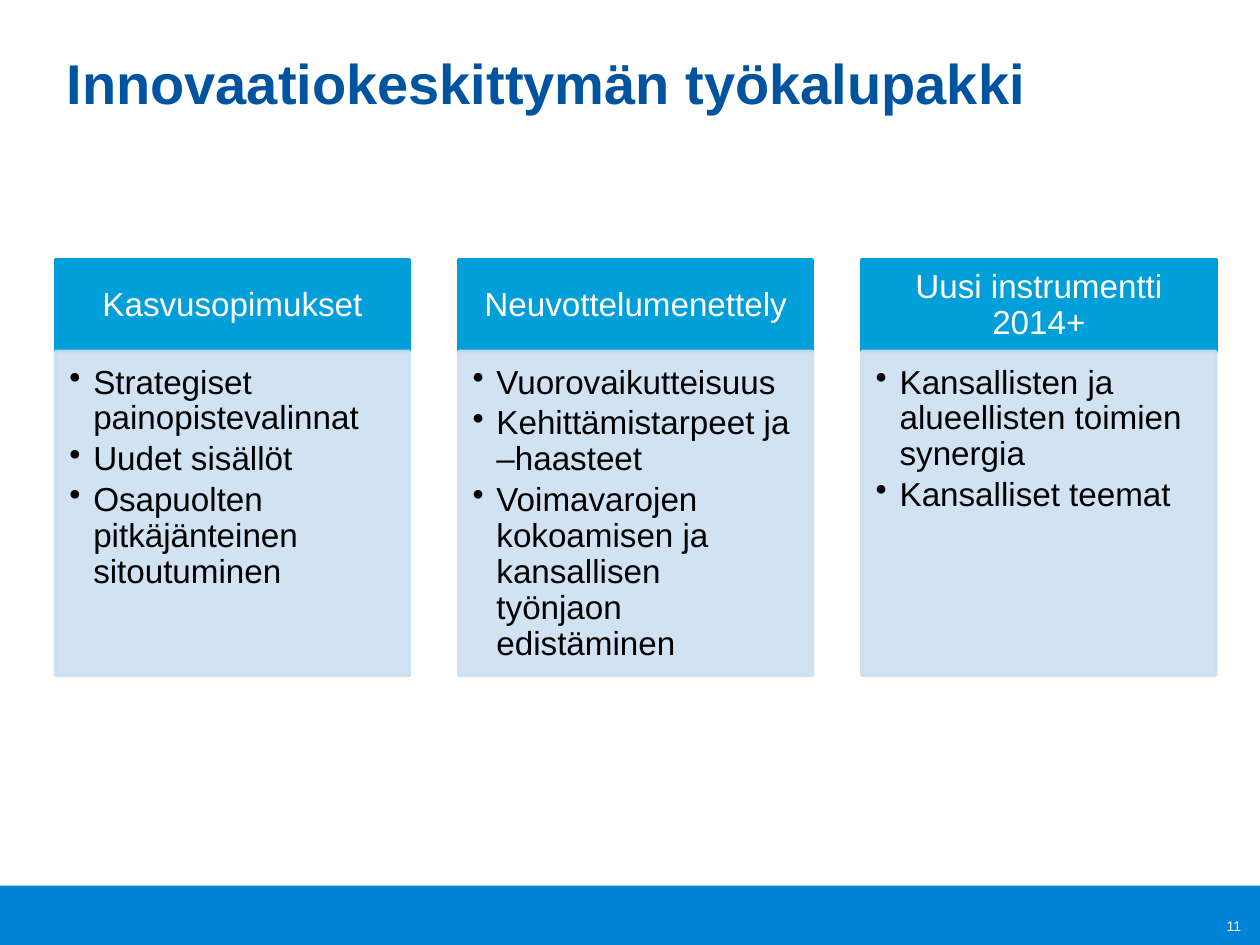
"""Build the innovation cluster toolkit slide with three headed columns."""
from lxml import etree
from pptx import Presentation, util as u
from pptx.dml.color import RGBColor
from pptx.enum import shapes, text
from pptx.oxml import ns

TITLE = "Innovaatiokeskittymän työkalupakki"
PAGE = "11"
TOOLS = [
    ("Kasvusopimukset",
     ["Strategiset painopistevalinnat", "Uudet sisällöt",
      "Osapuolten pitkäjänteinen sitoutuminen"]),
    ("Neuvottelumenettely",
     ["Vuorovaikutteisuus", "Kehittämistarpeet ja –haasteet",
      "Voimavarojen kokoamisen ja kansallisen työnjaon edistäminen"]),
    ("Uusi instrumentti 2014+",
     ["Kansallisten ja alueellisten toimien synergia", "Kansalliset teemat"]),
]

WIDTH, HEIGHT = 10, 7.5
FOOTER_TOP = 7.03
LEFT, PITCH, COLUMN = 0.44, 3.2, 2.81
TOP, HEAD, BODY = 2.06, 0.73, 2.57
INDENT = 0.19
WHITE = RGBColor(0xFF, 0xFF, 0xFF)
BLACK = RGBColor(0, 0, 0)
NAVY = RGBColor(0x00, 0x54, 0x9F)
FOOTER_BLUE = RGBColor(0x00, 0x83, 0xD7)
HEAD_BLUE = RGBColor(0x00, 0x9F, 0xDA)
PALE_BLUE = RGBColor(0xCC, 0xDF, 0xF1)


def inches(*values):
    return [u.Inches(value) for value in values]


def add_panel(slide, box, color, outlined=True, opacity=None):
    panel = slide.shapes.add_shape(shapes.MSO_SHAPE.RECTANGLE, *inches(*box))
    panel.shadow.inherit = False
    panel.fill.solid()
    panel.fill.fore_color.rgb = color
    if outlined:
        panel.line.color.rgb = color
        panel.line.width = u.Pt(2)
    else:
        panel.line.fill.background()
    if opacity:
        for tint in panel._element.spPr.iter(ns.qn("a:srgbClr")):
            etree.SubElement(tint, ns.qn("a:alpha"), val=str(opacity * 1000))
    return panel


def write(holder, lines, size, color, insets, anchor, align,
          spacing=1.0, after=0, bold=False, bulleted=False):
    frame = holder.text_frame
    frame.word_wrap = True
    frame.vertical_anchor = anchor
    (frame.margin_left, frame.margin_top,
     frame.margin_right, frame.margin_bottom) = inches(*insets)
    for index, line in enumerate(lines):
        paragraph = frame.add_paragraph() if index else frame.paragraphs[0]
        paragraph.alignment = align
        paragraph.line_spacing = spacing
        paragraph.space_after = u.Pt(after)
        if bulleted:
            props = paragraph._p.get_or_add_pPr()
            props.set("marL", str(u.Inches(INDENT)))
            props.set("indent", str(-u.Inches(INDENT)))
            etree.SubElement(props, ns.qn("a:buChar"), char="•")
        run = paragraph.add_run()
        run.text = line
        run.font.name = "Arial"
        run.font.size = u.Pt(size)
        run.font.bold = bold
        run.font.color.rgb = color


def main():
    deck = Presentation()
    deck.slide_width, deck.slide_height = inches(WIDTH, HEIGHT)
    slide = deck.slides.add_slide(deck.slide_layouts[6])
    anchor, align = text.MSO_ANCHOR, text.PP_ALIGN

    add_panel(slide, (0, FOOTER_TOP, WIDTH, HEIGHT - FOOTER_TOP),
              FOOTER_BLUE, outlined=False)
    title = slide.shapes.add_textbox(*inches(0.43, 0.15, 9.21, 1.08))
    write(title, [TITLE], 32, NAVY, (0.1, 0.05, 0.1, 0.05),
          anchor.MIDDLE, align.LEFT, spacing=0.85, bold=True)

    for column, (heading, points) in enumerate(TOOLS):
        x = LEFT + column * PITCH
        head = add_panel(slide, (x, TOP, COLUMN, HEAD), HEAD_BLUE)
        write(head, [heading], 19, WHITE, (0.15, 0.08, 0.15, 0.08),
              anchor.MIDDLE, align.CENTER, spacing=0.9)
        body = add_panel(slide, (x, TOP + HEAD, COLUMN, BODY),
                         PALE_BLUE, opacity=90)
        write(body, points, 19, BLACK, (0.11, 0.11, 0.15, 0.17),
              anchor.TOP, align.LEFT, spacing=0.9, after=2.85, bulleted=True)

    page = slide.shapes.add_textbox(*inches(9.33, 7.24, 0.52, 0.22))
    write(page, [PAGE], 8, WHITE, (0, 0, 0, 0), anchor.MIDDLE, align.RIGHT)
    deck.save("out.pptx")


if __name__ == "__main__":
    main()
